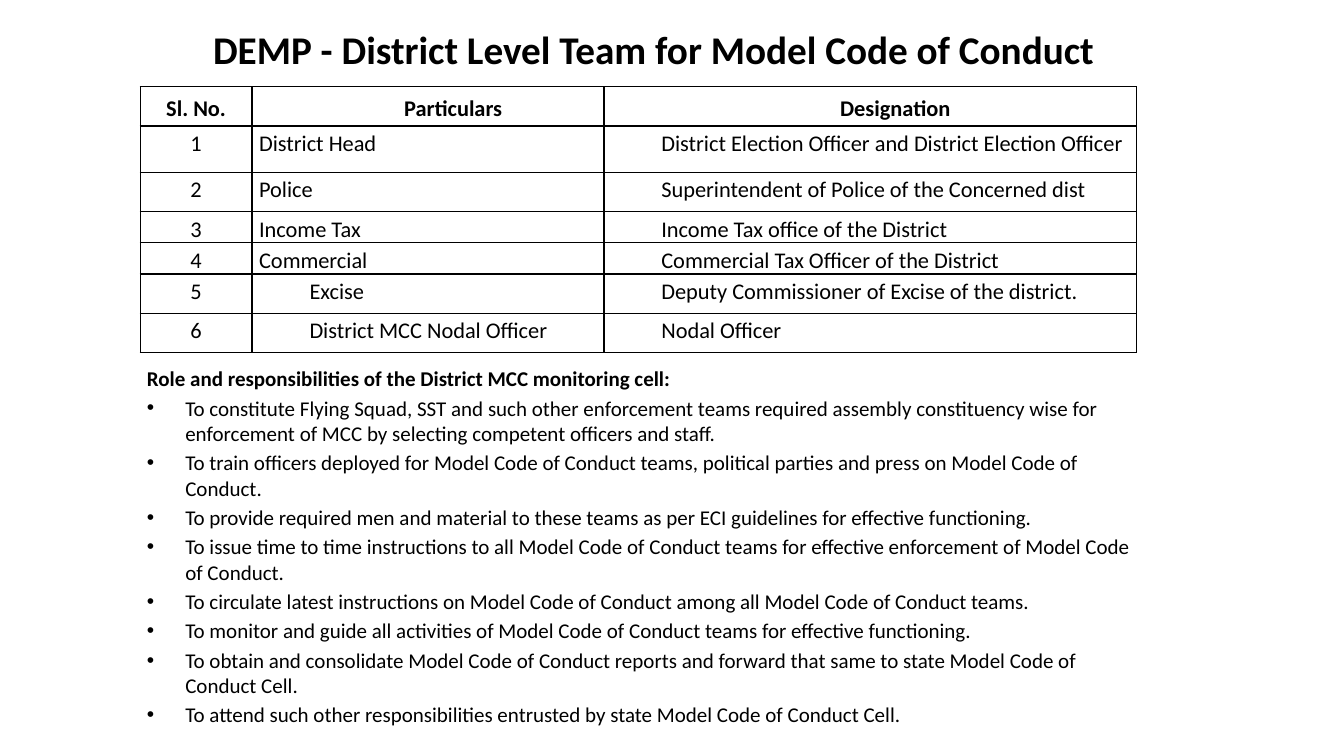
import pptx
import pptx.util
import pptx.dml.color
import pptx.enum.text
import lxml.etree

TITLE = "DEMP - District Level Team for Model Code of Conduct"
HEADS = ("Sl. No.", "Particulars", "Designation")
TEAM = [
    ("District Head", 0, "District Election Officer and District Election Officer"),
    ("Police", 0, "Superintendent of Police of the Concerned dist"),
    ("Income Tax", 0, "Income Tax office of the District"),
    ("Commercial", 0, "Commercial Tax Officer of the District"),
    ("Excise", 50, "Deputy Commissioner of Excise of the district."),
    ("District MCC Nodal Officer", 50, "Nodal Officer"),
]
LEAD = "Role and responsibilities of the District MCC monitoring cell:"
ROLES = [
    "To constitute Flying Squad, SST and such other enforcement teams required assembly constituency wise for enforcement of MCC by selecting competent officers and staff.",
    "To train officers deployed for Model Code of Conduct teams, political parties and press on Model Code of Conduct.",
    "To provide required men and material to these teams as per ECI guidelines for effective functioning.",
    "To issue time to time instructions to all Model Code of Conduct teams for effective enforcement of Model Code of Conduct.",
    "To circulate latest instructions on Model Code of Conduct among all Model Code of Conduct teams.",
    "To monitor and guide all activities of Model Code of Conduct teams for effective functioning.",
    "To obtain and consolidate Model Code of Conduct reports and forward that same to state Model Code of Conduct Cell.",
    "To attend such other responsibilities entrusted by state Model Code of Conduct Cell.",
]
COLS = (111, 349, 528)
ROWS = (39, 46, 39, 31, 31, 39, 39)

BLACK = pptx.dml.color.RGBColor(0, 0, 0)
WHITE = pptx.dml.color.RGBColor(255, 255, 255)
FONT = "Calibri"
LEFT = pptx.enum.text.PP_ALIGN.LEFT
MID = pptx.enum.text.PP_ALIGN.CENTER
CENTER = pptx.enum.text.MSO_ANCHOR.MIDDLE
TOP = pptx.enum.text.MSO_ANCHOR.TOP


def px(n):
    return pptx.util.Emu(n * 9144)


def node(parent, tag, **attrs):
    return lxml.etree.SubElement(parent, pptx.oxml.ns.qn(tag), attrs)


def write(frame, text, size, bold=False, align=LEFT, left=0, first=0,
          line=1.0, before=0, bullet=False):
    para = frame.paragraphs[0]
    if para.runs:
        para = frame.add_paragraph()
    para.alignment = align
    para.line_spacing = line
    para.space_before = pptx.util.Pt(before)
    props = para._p.get_or_add_pPr()
    props.set("marL", str(px(left)))
    props.set("indent", str(px(first)))
    if bullet:
        node(props, "a:buFont", typeface="Arial")
        node(props, "a:buChar", char="•")
    run = para.add_run()
    run.text = text
    font = run.font
    font.name, font.size, font.bold = FONT, pptx.util.Pt(size), bold
    font.color.rgb = BLACK


def textbox(slide, x, y, w, h, anchor=TOP):
    frame = slide.shapes.add_textbox(px(x), px(y), px(w), px(h)).text_frame
    frame.word_wrap = True
    frame.vertical_anchor = anchor
    return frame


def style(cell, anchor):
    props = cell._tc.get_or_add_tcPr()
    for side in "LRTB":
        edge = node(props, "a:ln" + side, w=str(pptx.util.Pt(1)))
        node(node(edge, "a:solidFill"), "a:srgbClr", val=str(BLACK))
    cell.fill.solid()
    cell.fill.fore_color.rgb = WHITE
    cell.margin_left = cell.margin_right = px(7)
    cell.margin_top = cell.margin_bottom = 0
    cell.vertical_anchor = anchor


def team_table(slide):
    table = slide.shapes.add_table(
        len(ROWS), len(COLS), px(139), px(86), px(sum(COLS)), px(sum(ROWS))).table
    for col, width in zip(table.columns, COLS):
        col.width = px(width)
    for row, height in zip(table.rows, ROWS):
        row.height = px(height)
    for c, head in enumerate(HEADS):
        cell = table.cell(0, c)
        style(cell, CENTER)
        write(cell.text_frame, head, 16, bold=True, align=MID,
              left=50 if c else 0, line=1.15)
    for r, (part, inset, post) in enumerate(TEAM, 1):
        forms = [
            (str(r), dict(align=MID, left=38, first=-38)),
            (part, dict(left=inset)),
            (post, dict(left=50)),
        ]
        for c, (text, form) in enumerate(forms):
            cell = table.cell(r, c)
            style(cell, TOP)
            write(cell.text_frame, text, 16, line=1.15, **form)


def main():
    deck = pptx.Presentation()
    deck.slide_width, deck.slide_height = px(1333), px(750)
    slide = deck.slides.add_slide(deck.slide_layouts[6])
    write(textbox(slide, 198, 16, 900, 64, CENTER), TITLE, 28, bold=True, align=MID)
    body = textbox(slide, 136, 358, 1016, 358)
    write(body, LEAD, 15, bold=True, left=38, first=-38, before=3)
    for role in ROLES:
        write(body, role, 15, left=38, first=-38, before=3, bullet=True)
    team_table(slide)
    deck.save("out.pptx")


if __name__ == "__main__":
    main()
